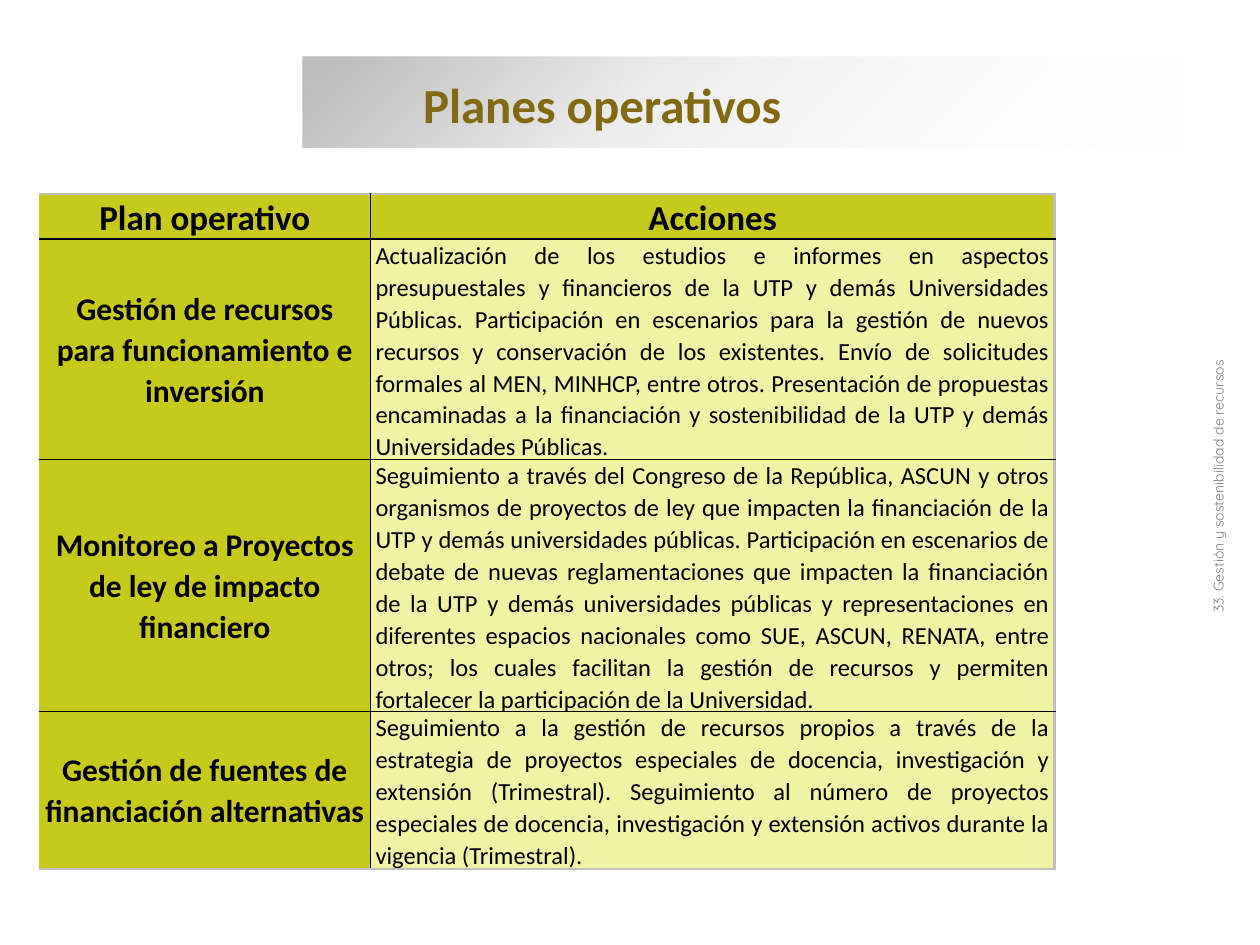
from dataclasses import dataclass
from lxml import etree
from pptx import Presentation
from pptx.dml.color import RGBColor
from pptx.enum.shapes import MSO_SHAPE
from pptx.enum.text import MSO_ANCHOR, MSO_AUTO_SIZE, PP_ALIGN
from pptx.oxml.ns import qn
from pptx.util import Cm, Pt

RECTANGLE = MSO_SHAPE.RECTANGLE
MIDDLE, TOP = MSO_ANCHOR.MIDDLE, MSO_ANCHOR.TOP
GROW = MSO_AUTO_SIZE.SHAPE_TO_FIT_TEXT
LEFT, CENTER, JUSTIFY = PP_ALIGN.LEFT, PP_ALIGN.CENTER, PP_ALIGN.JUSTIFY


@dataclass(frozen=True)
class Theme:
    font: str = "Calibri"
    side_font: str = "Quicksand"
    title: str = "826A12"
    text: str = "000000"
    side: str = "808080"
    label_fill: str = "C6CA1C"
    action_fill: str = "F0F2A4"
    rule: str = "000000"
    frame: str = "BFBFBF"
    fade: tuple = ((5, "BFBFBF", 100), (37, "BFBFBF", 31), (100, "FFFFFF", 0))
    title_size: int = 28
    header_size: int = 20
    label_size: int = 18
    action_size: int = 14
    side_size: int = 8


THEME = Theme()
HEADER = ("Plan operativo", "Acciones")
PLANS = (
    ("Gestión de recursos para funcionamiento e inversión",
     "Actualización de los estudios e informes en aspectos presupuestales y "
     "financieros de la UTP y demás Universidades Públicas. Participación en "
     "escenarios para la gestión de nuevos recursos y conservación de los "
     "existentes. Envío de solicitudes formales al MEN, MINHCP, entre otros. "
     "Presentación de propuestas encaminadas a la financiación y "
     "sostenibilidad de la UTP y demás Universidades Públicas."),
    ("Monitoreo a Proyectos de ley de impacto financiero",
     "Seguimiento a través del Congreso de la República, ASCUN y otros "
     "organismos de proyectos de ley que impacten la financiación de la UTP y "
     "demás universidades públicas. Participación en escenarios de debate de "
     "nuevas reglamentaciones que impacten la financiación de la UTP y demás "
     "universidades públicas y representaciones en diferentes espacios "
     "nacionales como SUE, ASCUN, RENATA, entre otros; los cuales facilitan la "
     "gestión de recursos y permiten fortalecer la participación de la "
     "Universidad."),
    ("Gestión de fuentes de financiación alternativas",
     "Seguimiento a la gestión de recursos propios a través de la estrategia de "
     "proyectos especiales de docencia, investigación y extensión (Trimestral). "
     "Seguimiento al número de proyectos especiales de docencia, investigación "
     "y extensión activos durante la vigencia (Trimestral)."),
)


def assign(target, values):
    for name, value in values.items():
        setattr(target, name, value)


def write(frame, text, size, color, font=THEME.font, bold=False, align=LEFT):
    para = frame.paragraphs[0]
    para.alignment = align
    span = para.add_run()
    span.text = text
    assign(span.font, {"name": font, "size": Pt(size), "bold": bold})
    span.font.color.rgb = RGBColor.from_string(color)
    return para


def add_color(parent, color, alpha=100):
    node = etree.SubElement(parent, qn("a:srgbClr"), val=color)
    if alpha < 100:
        etree.SubElement(node, qn("a:alpha"), val=str(alpha * 1000))


def fade_fill(shape, stops, angle):
    shape.fill.gradient()
    gradient = shape.fill._xPr.find(qn("a:gradFill"))
    for child in list(gradient):
        gradient.remove(child)
    stop_list = etree.SubElement(gradient, qn("a:gsLst"))
    for place, color, alpha in stops:
        stop = etree.SubElement(stop_list, qn("a:gs"), pos=str(place * 1000))
        add_color(stop, color, alpha)
    etree.SubElement(gradient, qn("a:lin"), ang=str(angle * 60000), scaled="0")


def add_border(cell, side, color, width):
    properties = cell._tc.get_or_add_tcPr()
    line = etree.SubElement(properties, qn("a:ln" + side), w=str(Pt(width)))
    if color:
        add_color(etree.SubElement(line, qn("a:solidFill")), color)
    else:
        etree.SubElement(line, qn("a:noFill"))


def add_title(page, text, left, top, width, height):
    group = page.shapes.add_group_shape()
    band = group.shapes.add_shape(
        RECTANGLE, Cm(left), Cm(top), Cm(width), Cm(height))
    band.shadow.inherit = False
    band.line.fill.background()
    fade_fill(band, THEME.fade, 45)
    box = group.shapes.add_textbox(
        Cm(left + 2.18), Cm(top + 0.23), Cm(width - 1.98), Cm(1.45))
    assign(box.text_frame, {
        "word_wrap": True, "auto_size": GROW, "vertical_anchor": MIDDLE})
    write(box.text_frame, text, THEME.title_size, THEME.title, bold=True)


def fill_cell(cell, text, is_header, is_label, is_last):
    assign(cell, {
        "margin_left": Cm(0.1), "margin_right": Cm(0.1), "margin_top": 0,
        "margin_bottom": 0, "vertical_anchor": MIDDLE})
    strong = is_header or is_label
    size = (THEME.header_size if is_header
            else THEME.label_size if is_label else THEME.action_size)
    para = write(cell.text_frame, text, size, THEME.text, bold=strong,
                 align=CENTER if strong else JUSTIFY)
    para.line_spacing = 1.07
    borders = {
        "L": None if is_label else THEME.rule,
        "R": THEME.rule if is_label else THEME.frame,
        "T": THEME.frame if is_header else THEME.rule,
        "B": THEME.frame if is_last else THEME.rule,
    }
    for side, color in borders.items():
        add_border(cell, side, color, 1.5 if color == THEME.frame else 1)
    cell.fill.solid()
    cell.fill.fore_color.rgb = RGBColor.from_string(
        THEME.label_fill if strong else THEME.action_fill)


def add_plan_table(page, left, top, widths, heights):
    rows = (HEADER, *PLANS)
    table = page.shapes.add_table(
        len(rows), len(HEADER), Cm(left), Cm(top),
        Cm(sum(widths)), Cm(sum(heights))).table
    for column, width in zip(table.columns, widths):
        column.width = Cm(width)
    for index, (texts, height) in enumerate(zip(rows, heights)):
        table.rows[index].height = Cm(height)
        for position, text in enumerate(texts):
            fill_cell(table.cell(index, position), text, index == 0,
                      position == 0, index == len(rows) - 1)


def add_side_label(page, text, left, top, width, height):
    box = page.shapes.add_textbox(Cm(left), Cm(top), Cm(width), Cm(height))
    box.rotation = 270
    assign(box.text_frame, {
        "word_wrap": True, "auto_size": GROW, "vertical_anchor": TOP})
    write(box.text_frame, text, THEME.side_size, THEME.side,
          font=THEME.side_font, align=CENTER)


def main():
    deck = Presentation()
    assign(deck, {"slide_width": Cm(25.4), "slide_height": Cm(19.05)})
    page = deck.slides.add_slide(deck.slide_layouts[6])
    add_title(page, "Planes operativos", 6.1, 1.14, 17.73, 1.83)
    add_plan_table(page, 0.79, 3.91, (6.68, 13.79), (0.91, 4.44, 5.08, 3.16))
    add_side_label(page, "33. Gestión y sostenibilidad de recursos",
                   18.42, 9.5, 12.29, 0.61)
    deck.save("out.pptx")


if __name__ == "__main__":
    main()
